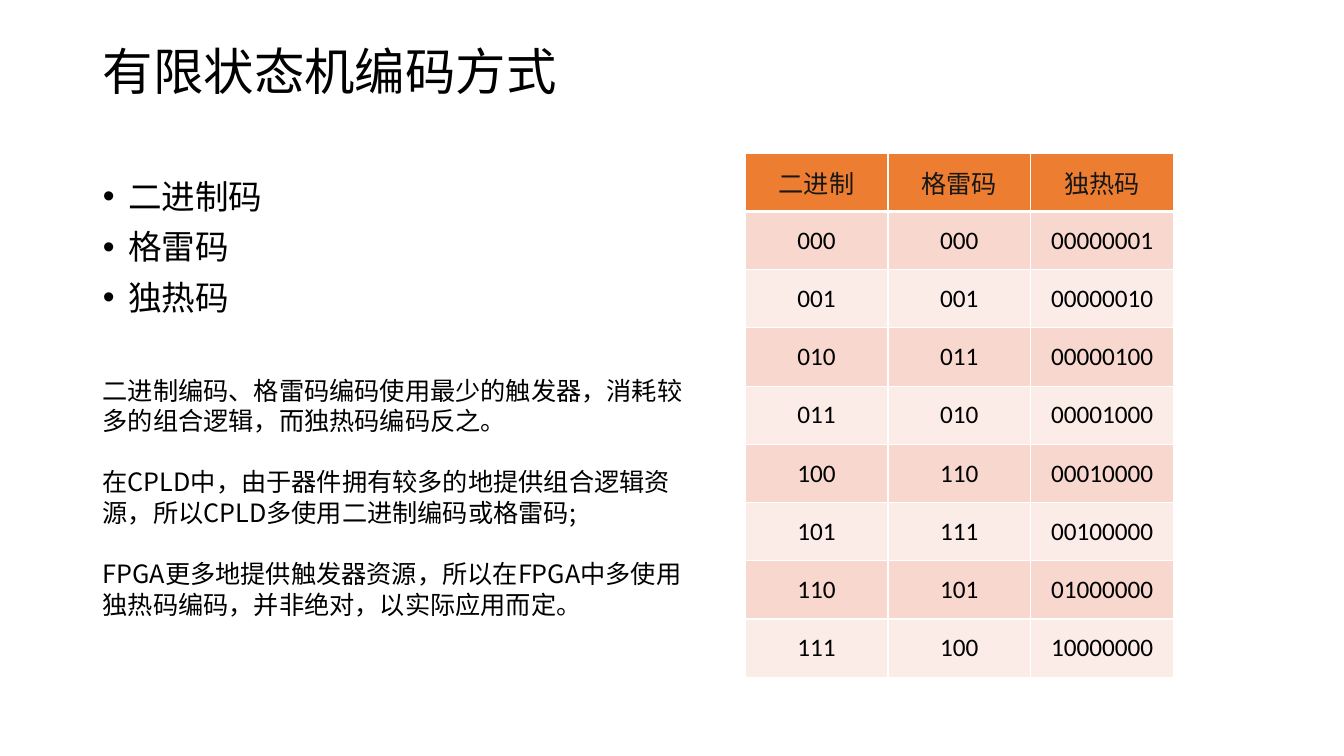
from dataclasses import dataclass

from lxml.etree import SubElement
from pptx import Presentation
from pptx.dml.color import RGBColor
from pptx.enum.text import MSO_ANCHOR, MSO_AUTO_SIZE, PP_ALIGN
from pptx.oxml.ns import qn
from pptx.util import Inches, Pt

BLACK = RGBColor(0x00, 0x00, 0x00)
HEADER_TEXT = RGBColor(0x18, 0x17, 0x17)
HEADER_FILL = RGBColor(0xED, 0x7D, 0x31)
BAND_FILLS = (RGBColor(0xF8, 0xD7, 0xCE), RGBColor(0xFC, 0xEC, 0xE8))
BORDER = RGBColor(0xFF, 0xFF, 0xFF)
LATIN_FONT = "Calibri"
CHINESE_FONT = "Noto Sans CJK SC"

TITLE = "有限状态机编码方式"
HEADERS = ("二进制", "格雷码", "独热码")
STATE_BITS = 3
STATE_COUNT = 2 ** STATE_BITS


@dataclass(frozen=True)
class Box:
    left: float
    top: float
    width: float
    height: float


@dataclass(frozen=True)
class TextStyle:
    font: str
    size: float
    line_spacing: float | Pt
    space_before: float = 0
    bullet_indent: float = 0


TITLE_BOX = Box(0.92, 0.26, 11.5, 0.81)
LIST_BOX = Box(0.92, 1.74, 3.68, 1.68)
NOTES_BOX = Box(0.92, 3.67, 6.04, 2.52)
TABLE_BOX = Box(7.39, 1.52, 4.25, 5.2)

TITLE_STYLE = TextStyle(LATIN_FONT, 36, 1.1)
LIST_STYLE = TextStyle(CHINESE_FONT, 24, Pt(25.8), 10, 0.25)
NOTES_STYLE = TextStyle(CHINESE_FONT, 18, Pt(21.8), 21.8)

ENCODINGS = ("二进制码", "格雷码", "独热码")
NOTES = (
    "二进制编码、格雷码编码使用最少的触发器，消耗较多的组合逻辑，而独热码编码反之。",
    "在CPLD中，由于器件拥有较多的地提供组合逻辑资源，所以CPLD多使用二进制编码或格雷码;",
    "FPGA更多地提供触发器资源，所以在FPGA中多使用独热码编码，并非绝对，以实际应用而定。",
)


def place(shape, box: Box) -> None:
    shape.left, shape.top = Inches(box.left), Inches(box.top)
    shape.width, shape.height = Inches(box.width), Inches(box.height)


def write_paragraphs(shape, texts: tuple[str, ...], style: TextStyle,
                     anchor: MSO_ANCHOR = MSO_ANCHOR.TOP) -> None:
    frame = shape.text_frame
    frame.word_wrap = True
    frame.auto_size = MSO_AUTO_SIZE.NONE
    frame.vertical_anchor = anchor
    for index, text in enumerate(texts):
        paragraph = frame.add_paragraph() if index else frame.paragraphs[0]
        paragraph.text = text
        if style.bullet_indent:
            properties = paragraph._p.get_or_add_pPr()
            indent = Inches(style.bullet_indent)
            properties.set("marL", str(indent))
            properties.set("indent", str(-indent))
            SubElement(properties, qn("a:buChar"), char="•")
        paragraph.alignment = PP_ALIGN.LEFT
        paragraph.line_spacing = style.line_spacing
        paragraph.space_before = Pt(style.space_before if index else 0)
        paragraph.font.name = style.font
        paragraph.font.size = Pt(style.size)
        paragraph.font.color.rgb = BLACK


def set_borders(cell, bottom_width: float) -> None:
    properties = cell._tc.get_or_add_tcPr()
    widths = {"a:lnL": 1, "a:lnR": 1, "a:lnT": 1, "a:lnB": bottom_width}
    for tag, width in widths.items():
        line = SubElement(properties, qn(tag), w=str(Pt(width)))
        fill = SubElement(line, qn("a:solidFill"))
        SubElement(fill, qn("a:srgbClr"), val=str(BORDER))


def code_row(state: int) -> tuple[str, str, str]:
    """Binary, Gray and one-hot codes of a state."""
    return (f"{state:0{STATE_BITS}b}",
            f"{state ^ state >> 1:0{STATE_BITS}b}",
            f"{1 << state:0{STATE_COUNT}b}")


def add_code_table(slide, box: Box) -> None:
    rows = [HEADERS, *(code_row(state) for state in range(STATE_COUNT))]
    table = slide.shapes.add_table(
        len(rows), len(HEADERS), Inches(box.left), Inches(box.top),
        Inches(box.width), Inches(box.height)).table
    for row_index, values in enumerate(rows):
        is_header = row_index == 0
        for column_index, value in enumerate(values):
            cell = table.cell(row_index, column_index)
            set_borders(cell, 3 if is_header else 1)
            cell.fill.solid()
            cell.fill.fore_color.rgb = (
                HEADER_FILL if is_header else BAND_FILLS[(row_index - 1) % 2])
            cell.vertical_anchor = MSO_ANCHOR.MIDDLE
            cell.text = value
            paragraph = cell.text_frame.paragraphs[0]
            paragraph.alignment = PP_ALIGN.CENTER
            paragraph.font.name = LATIN_FONT
            paragraph.font.size = Pt(18)
            paragraph.font.bold = False
            paragraph.font.color.rgb = HEADER_TEXT if is_header else BLACK


def main() -> None:
    presentation = Presentation()
    presentation.slide_width = Inches(13.33)
    presentation.slide_height = Inches(7.5)
    slide = presentation.slides.add_slide(presentation.slide_layouts[1])

    # Title and list of encodings
    title, encoding_list = slide.placeholders
    place(title, TITLE_BOX)
    write_paragraphs(title, (TITLE,), TITLE_STYLE, MSO_ANCHOR.MIDDLE)
    place(encoding_list, LIST_BOX)
    write_paragraphs(encoding_list, ENCODINGS, LIST_STYLE)

    # Code table
    add_code_table(slide, TABLE_BOX)

    # Notes on choosing an encoding
    notes = slide.shapes.add_textbox(0, 0, 0, 0)
    place(notes, NOTES_BOX)
    write_paragraphs(notes, NOTES, NOTES_STYLE)

    presentation.save("out.pptx")


if __name__ == "__main__":
    main()
